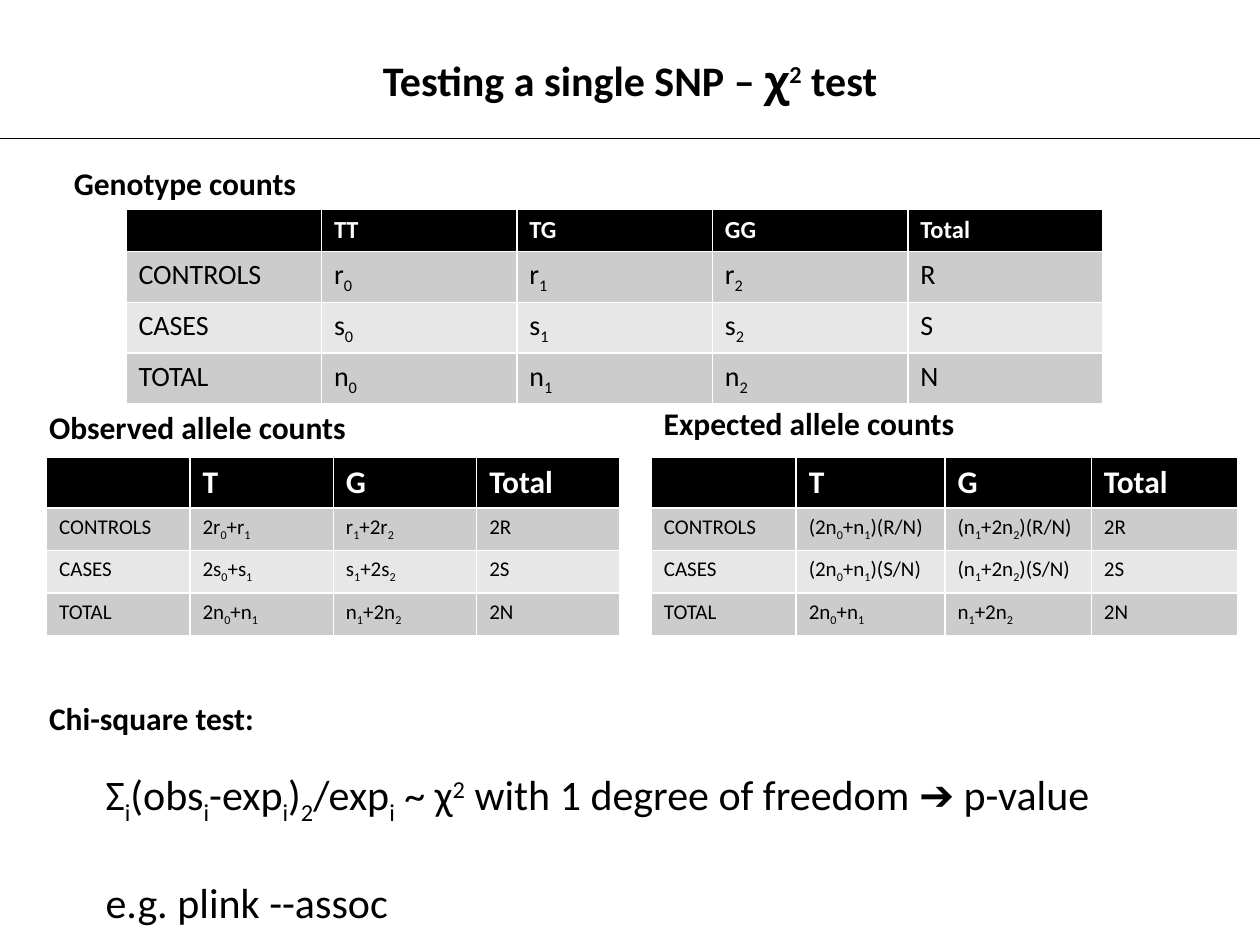
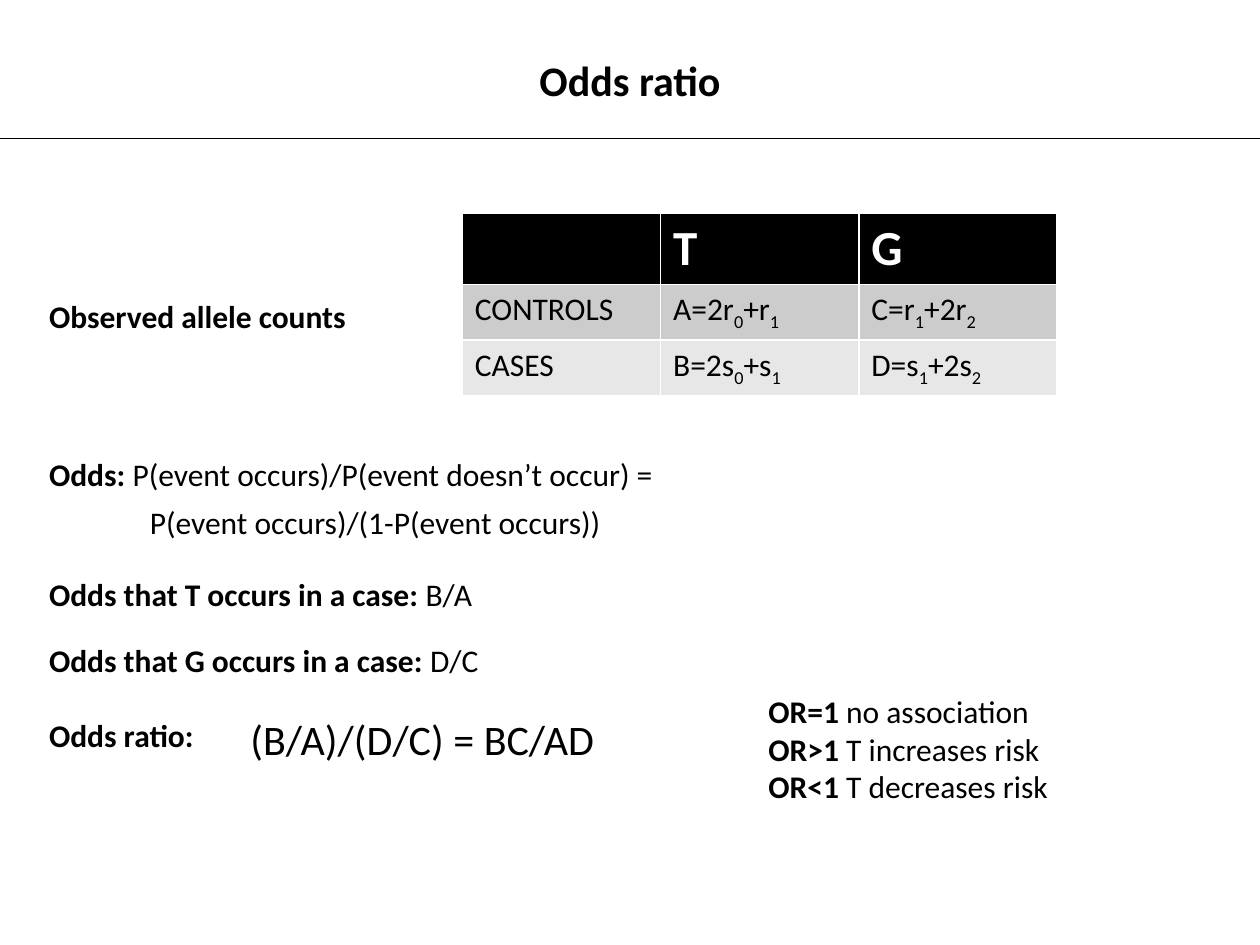
from itertools import groupby

from lxml import etree
from pptx import Presentation
from pptx.dml.color import RGBColor
from pptx.enum.shapes import MSO_CONNECTOR
from pptx.enum.text import MSO_ANCHOR, PP_ALIGN
from pptx.oxml.ns import qn
from pptx.util import Cm, Pt

STRAIGHT = MSO_CONNECTOR.STRAIGHT
TOP = MSO_ANCHOR.TOP
LEFT, CENTER = PP_ALIGN.LEFT, PP_ALIGN.CENTER

COLORS = {
    "ink": "000000",
    "header_text": "FFFFFF",
    "header": "000000",
    "band_dark": "CCCCCC",
    "band_light": "E7E7E7",
}
FONT, SYMBOL_FONT = "Calibri", "Noto Sans"
HEADING_SIZE, FORMULA_SIZE = 18, 24
SLIDE_WIDTH, SLIDE_HEIGHT = 25.4, 19.05
LINE_HEIGHT = 1.02
GROUPS = {"CONTROLS": "r", "CASES": "s", "TOTAL": "n"}
BASELINES = {"_": "-25000", "^": "30000"}


def color(name):
    return RGBColor.from_string(COLORS[name])


def styled_characters(text):
    """Yield (character, mark, bold): _ ^ $ mark the next character, * toggles bold."""
    mark, bold = "", False
    for character in text:
        if character == "*":
            bold = not bold
        elif character in "_^$":
            mark = character
        else:
            yield character, mark, bold
            mark = ""


def write(paragraph, text, size, bold=False, ink="ink", align=LEFT):
    """Fill a paragraph with marked-up text (_sub, ^super, $symbol, *bold*)."""
    paragraph.alignment = align
    font = paragraph.font
    font.name, font.size, font.bold = FONT, Pt(size), bold
    font.color.rgb = color(ink)
    for (mark, strong), group in groupby(styled_characters(text), key=lambda c: c[1:]):
        run = paragraph.add_run()
        run.text = "".join(character for character, *_ in group)
        if strong:
            run.font.bold = True
        if mark == "$":
            run.font.name = SYMBOL_FONT
        elif mark:
            run.font._element.set("baseline", BASELINES[mark])


def add_text(slide, box, lines, size=HEADING_SIZE, bold=False, gap=0):
    """Write one paragraph per line, gap points apart."""
    frame = slide.shapes.add_textbox(*map(Cm, box)).text_frame
    frame.word_wrap = True
    for index, line in enumerate(lines):
        paragraph = frame.paragraphs[0] if index == 0 else frame.add_paragraph()
        write(paragraph, line, size, bold)
        if index:
            paragraph.space_before = Pt(gap)


def add_counts(slide, box, header, rows, widths, row_height, header_size, body_size):
    frame = slide.shapes.add_table(len(rows) + 1, len(header), *map(Cm, box))
    table = frame.table
    table.horz_banding = False
    for column, width in zip(table.columns, widths):
        column.width = Cm(width)
    for index, values in enumerate([header, *rows]):
        table.rows[index].height = Cm(row_height)
        is_header = index == 0
        fill = "header" if is_header else "band_dark" if index % 2 else "band_light"
        for cell, value in zip(table.rows[index].cells, values):
            cell.fill.solid()
            cell.fill.fore_color.rgb = color(fill)
            write(cell.text_frame.paragraphs[0], value,
                  header_size if is_header else body_size, is_header,
                  "header_text" if is_header else "ink")
    frame.height = Cm(box[3])


def titled_slide(deck, title_text):
    slide = deck.slides.add_slide(deck.slide_layouts[5])
    rule = slide.shapes.add_connector(STRAIGHT, 0, Cm(2.79), Cm(SLIDE_WIDTH), Cm(2.79))
    rule.line.color.rgb = color("ink")
    rule.line.width = Pt(0.75)
    etree.SubElement(rule._element.spPr, qn("a:effectLst"))

    title = slide.shapes.title
    title.left, title.top, title.width, title.height = map(Cm, (0, 0.97, SLIDE_WIDTH, 1.27))
    title.text_frame.vertical_anchor = TOP
    write(title.text_frame.paragraphs[0], title_text, 24, True, align=CENTER)
    return slide


def allele_rows():
    return [[name, f"2{x}_0+{x}_1", f"{x}_1+2{x}_2", f"2{x.upper()}"]
            for name, x in GROUPS.items()]


def expected_rows():
    *groups, total = allele_rows()
    shares = [[name, f"(2n_0+n_1)({x}/N)", f"(n_1+2n_2)({x}/N)", f"2{x}"]
              for (name, *_), x in zip(groups, "RS")]
    return [*shares, total]


def genotype_panel(slide, box):
    left, top, width, _ = box
    add_text(slide, (left - 1.3, top - 1.04, 6.05, LINE_HEIGHT), ["Genotype counts"], bold=True)
    rows = [[name, *(f"{x}_{i}" for i in range(3)), x.upper()] for name, x in GROUPS.items()]
    add_counts(slide, box, ["", "TT", "TG", "GG", "Total"], rows,
               [width / 5] * 5, 0.71, 14, 16)


def allele_panel(slide, box, heading, heading_shift, rows, widths):
    """Four-column allele table; heading_shift is the heading's (x, y) from the box corner."""
    left, top, *_ = box
    shift_x, shift_y = heading_shift
    add_text(slide, (left + shift_x, top + shift_y, 7.95, LINE_HEIGHT), [heading], bold=True)
    add_counts(slide, box, ["", "T", "G", "Total"], rows, widths, 0.86, 18, 12)


def chi_square_panel(slide, box):
    left, top, width, height = box
    add_text(slide, (left, top, 5.94, LINE_HEIGHT), ["Chi-square test:"], bold=True)
    add_text(slide, (left + 1.14, top + 1.4, width - 1.14, height - 1.4),
             ["Σ_i(obs_i-exp_i)_2/exp_i ~ χ^2 with 1 degree of freedom ➔ p-value",
              "e.g. plink --assoc"], FORMULA_SIZE, gap=29)


def observed_panel(slide, box):
    left, top, width, height = box
    table_left = 8.58
    table_width = width - table_left
    add_text(slide, (left, top + 1.58, 8.13, LINE_HEIGHT), ["Observed allele counts"], bold=True)
    rows = [[name, f"{first}={t}", f"{second}={g}"]
            for (name, t, g, _), first, second in zip(allele_rows(), "AB", "CD")]
    add_counts(slide, (left + table_left, top, table_width, height), ["", "T", "G"], rows,
               [table_width / 3] * 3, 0.86, 28, 18)


def odds_panel(slide, box):
    left, top, width, _ = box
    statements = [
        (0, 0, "*Odds: *P(event occurs)/P(event doesn’t occur) ="),
        (2.03, 0.97, "P(event occurs)/(1-P(event occurs))"),
        (0, 2.42, "*Odds that T occurs in a case: *B/A"),
        (0, 3.76, "*Odds that G occurs in a case: *D/C"),
    ]
    for indent, drop, statement in statements:
        add_text(slide, (left + indent, top + drop, width - indent, LINE_HEIGHT), [statement])


def odds_ratio_panel(slide, box):
    left, top, width, height = box
    reading_left = 14.5
    add_text(slide, (left, top + 0.48, 4.06, LINE_HEIGHT), ["Odds ratio:"], bold=True)
    add_text(slide, (left + 4.06, top + 0.43, 8.15, 1.27), ["(B/A)/(D/C) = BC/AD"], FORMULA_SIZE)
    add_text(slide, (left + reading_left, top, width - reading_left, height),
             ["*OR=1 *no association", "*OR>1 *T increases risk", "*OR<1 *T decreases risk"])


def chi_square_slide(deck):
    slide = titled_slide(deck, "Testing a single SNP – $χ^2 test")
    genotype_panel(slide, (2.54, 4.22, 19.7, 3.63))
    allele_panel(slide, (0.94, 9.22, 11.56, 3.61), "Observed allele counts",
                 (-0.2, -1.12), allele_rows(), [2.89] * 4)
    allele_panel(slide, (13.13, 9.22, 11.81, 3.61), "Expected allele counts",
                 (0, -1.19), expected_rows(), [2.92, 3, 2.95, 2.95])
    chi_square_panel(slide, (0.74, 13.97, 23, 4.73))


def odds_ratio_slide(deck):
    slide = titled_slide(deck, "Odds ratio")
    observed_panel(slide, (0.74, 4.29, 20.57, 3.48))
    odds_panel(slide, (0.74, 9.04, 13.72, 4.78))
    odds_ratio_panel(slide, (0.74, 13.82, 21.28, 2.57))


def main():
    deck = Presentation()
    deck.slide_width, deck.slide_height = Cm(SLIDE_WIDTH), Cm(SLIDE_HEIGHT)
    chi_square_slide(deck)
    odds_ratio_slide(deck)
    deck.save("out.pptx")


if __name__ == "__main__":
    main()
